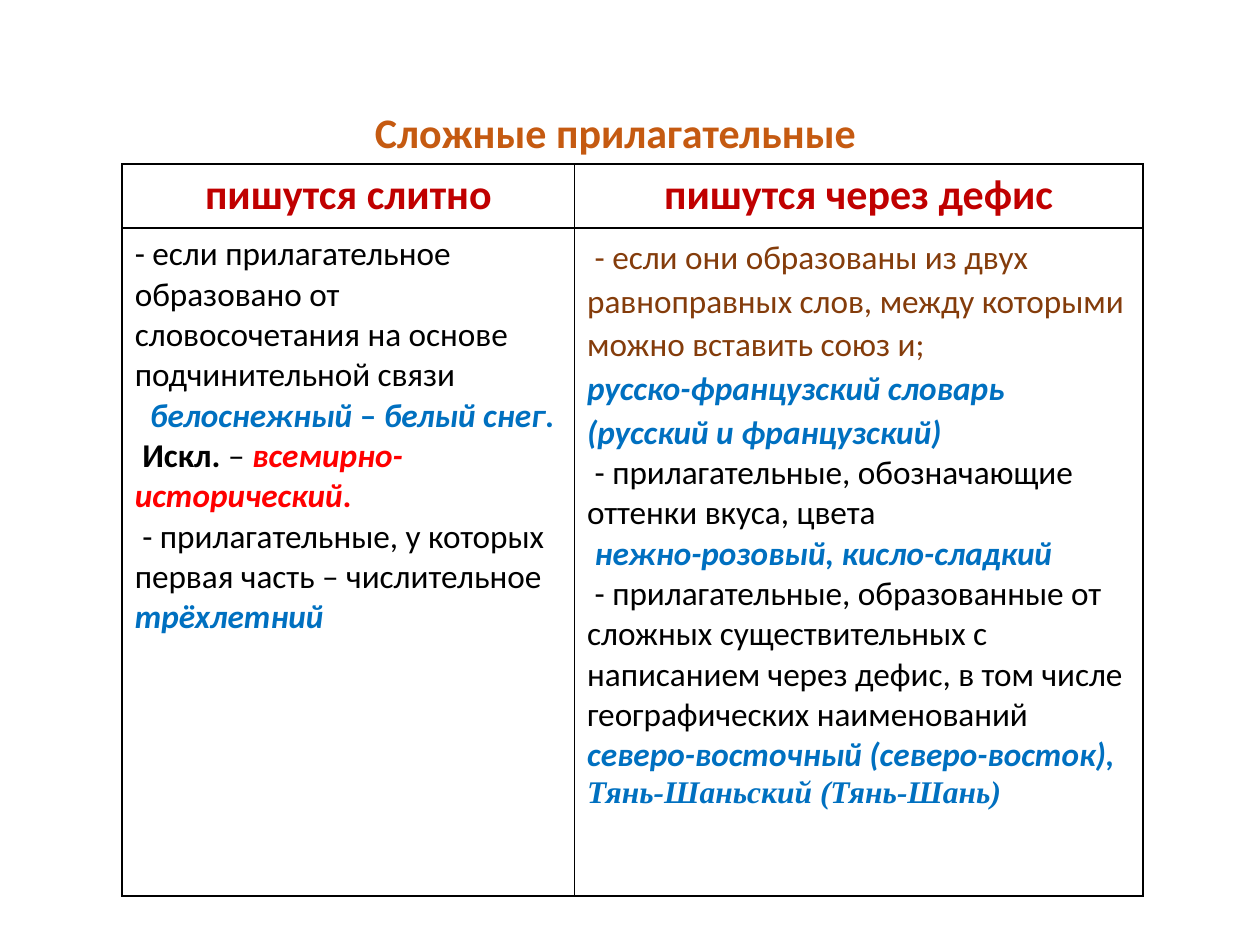
"""Build a slide with a table of spelling rules for Russian compound adjectives."""
from dataclasses import dataclass

from lxml.etree import SubElement
from pptx import Presentation
from pptx.dml.color import RGBColor
from pptx.enum.text import PP_ALIGN
from pptx.oxml.ns import qn
from pptx.util import Inches, Pt

BLACK = RGBColor(0x00, 0x00, 0x00)
CRIMSON = RGBColor(0xC0, 0x00, 0x00)
RED = RGBColor(0xFF, 0x00, 0x00)
BLUE = RGBColor(0x00, 0x70, 0xC0)
BROWN = RGBColor(0x84, 0x3C, 0x0B)
ORANGE = RGBColor(0xC5, 0x5A, 0x11)

BODY = {"name": "Calibri", "size": Pt(19), "bold": False, "italic": False, "color": BLACK}
RULE = BODY | {"color": BROWN}
STRONG = BODY | {"bold": True}
EXAMPLE = STRONG | {"italic": True, "color": BLUE}
EXAMPLE_UPRIGHT = EXAMPLE | {"italic": False}
EXAMPLE_SERIF = EXAMPLE | {"name": "Times New Roman", "size": Pt(18)}
EXCEPTION = EXAMPLE | {"color": RED}
EXCEPTION_UPRIGHT = EXCEPTION | {"italic": False}
HEADER = STRONG | {"size": Pt(24), "color": CRIMSON}
TITLE = HEADER | {"color": ORANGE}


@dataclass(frozen=True)
class Span:
    text: str
    style: dict


@dataclass(frozen=True)
class Para:
    spans: tuple[Span, ...]
    indent: float = 0
    spacing: float | None = None
    align: PP_ALIGN = PP_ALIGN.LEFT


def heading(text: str, style: dict) -> list[Para]:
    return [Para((Span(text, style),), align=PP_ALIGN.CENTER)]


TOGETHER = [
    Para((Span("- если прилагательное образовано от словосочетания на основе "
               "подчинительной связи", BODY),)),
    Para((Span("белоснежный ", EXAMPLE), Span("– ", EXAMPLE_UPRIGHT),
          Span("белый снег", EXAMPLE), Span(".", EXAMPLE_UPRIGHT)), indent=0.12),
    Para((Span("Искл.", STRONG), Span(" – ", BODY),
          Span("всемирно-исторический", EXCEPTION),
          Span(".", EXCEPTION_UPRIGHT)), indent=0.06),
    Para((Span("- прилагательные, у которых первая часть – числительное ", BODY),
          Span("трёхлетний", EXAMPLE)), indent=0.06),
]
HYPHENATED = [
    Para((Span("- если они образованы из двух равноправных слов, между которыми "
               "можно вставить союз и;", RULE),), indent=0.06, spacing=25),
    Para((Span("русско-французский словарь (русский и французский)", EXAMPLE),), spacing=25),
    Para((Span("- прилагательные, обозначающие оттенки вкуса, цвета", BODY),), indent=0.06),
    Para((Span("нежно-розовый, кисло-сладкий", EXAMPLE),), indent=0.06),
    Para((Span("- прилагательные, образованные от сложных существительных с написанием "
               "через дефис, в том числе географических наименований", BODY),), indent=0.06),
    Para((Span("северо-восточный (северо-восток), ", EXAMPLE),
          Span("Тянь-Шаньский (Тянь-Шань)", EXAMPLE_SERIF))),
]
ROWS = [
    [heading("пишутся слитно", HEADER), heading("пишутся через дефис", HEADER)],
    [TOGETHER, HYPHENATED],
]
COLUMN_WIDTHS = (3.59, 4.51)
ROW_HEIGHTS = (0.51, 5.3)


def write_paragraphs(frame, paras: list[Para]) -> None:
    frame.word_wrap = True
    for index, para in enumerate(paras):
        paragraph = frame.add_paragraph() if index else frame.paragraphs[0]
        paragraph.alignment = para.align
        if para.spacing:
            paragraph.line_spacing = Pt(para.spacing)
        if para.indent:
            paragraph._p.get_or_add_pPr().set("indent", str(Inches(para.indent)))
        for span in para.spans:
            run = paragraph.add_run()
            run.text = span.text
            for key, value in span.style.items():
                if key == "color":
                    run.font.color.rgb = value
                else:
                    setattr(run.font, key, value)


def draw_borders(cell) -> None:
    properties = cell._tc.get_or_add_tcPr()
    for side in ("lnL", "lnR", "lnT", "lnB"):
        line = SubElement(properties, qn(f"a:{side}"), w=str(Pt(1)))
        fill = SubElement(line, qn("a:solidFill"))
        SubElement(fill, qn("a:srgbClr"), val=str(BLACK))


def draw_table(page) -> None:
    table = page.shapes.add_table(
        len(ROW_HEIGHTS), len(COLUMN_WIDTHS), Inches(0.97), Inches(1.3),
        Inches(sum(COLUMN_WIDTHS)), Inches(sum(ROW_HEIGHTS))).table
    table.horz_banding = False
    for column, width in zip(table.columns, COLUMN_WIDTHS):
        column.width = Inches(width)
    for row, height, contents in zip(table.rows, ROW_HEIGHTS, ROWS):
        row.height = Inches(height)
        for cell, paras in zip(row.cells, contents):
            draw_borders(cell)
            cell.fill.background()
            write_paragraphs(cell.text_frame, paras)


def main() -> None:
    deck = Presentation()
    deck.slide_width, deck.slide_height = Inches(10), Inches(7.5)
    page = deck.slides.add_slide(deck.slide_layouts[6])
    draw_table(page)
    box = page.shapes.add_textbox(Inches(0.96), Inches(0.8), Inches(7.85), Inches(0.5))
    write_paragraphs(box.text_frame, heading("Сложные прилагательные", TITLE))
    deck.save("out.pptx")


if __name__ == "__main__":
    main()
